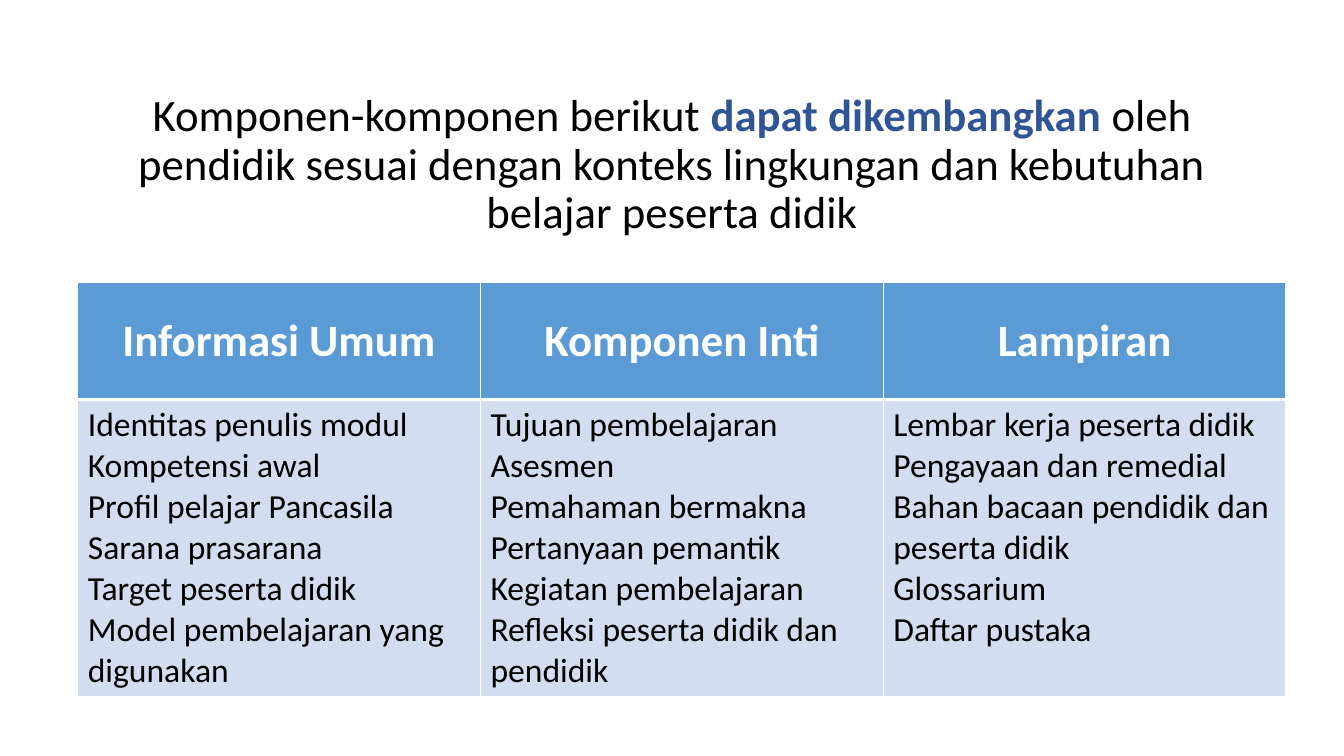
import pptx
import pptx.dml.color
import pptx.enum.text
import pptx.oxml
import pptx.oxml.ns
import pptx.util
from pptx.util import Cm

FONT = "Calibri"
BLACK, WHITE = "000000", "FFFFFF"
ACCENT, HEADER_FILL, BODY_FILL = "2F5597", "5B9BD5", "D2DEEF"

HEADING = [
    ("Komponen-komponen berikut ", BLACK, False),
    ("dapat dikembangkan", ACCENT, True),
    (" oleh pendidik sesuai dengan konteks lingkungan dan kebutuhan "
     "belajar peserta didik", BLACK, False),
]
COMPONENTS = {
    "Informasi Umum": [
        "Identitas penulis modul",
        "Kompetensi awal",
        "Profil pelajar Pancasila",
        "Sarana prasarana",
        "Target peserta didik",
        "Model pembelajaran yang digunakan",
    ],
    "Komponen Inti": [
        "Tujuan pembelajaran",
        "Asesmen",
        "Pemahaman bermakna",
        "Pertanyaan pemantik",
        "Kegiatan pembelajaran",
        "Refleksi peserta didik dan pendidik",
    ],
    "Lampiran": [
        "Lembar kerja peserta didik",
        "Pengayaan dan remedial",
        "Bahan bacaan pendidik dan peserta didik",
        "Glossarium",
        "Daftar pustaka",
    ],
}


def color(value):
    return pptx.dml.color.RGBColor.from_string(value)


def format_span(span, size, value, bold):
    span.font.name = FONT
    span.font.size = pptx.util.Pt(size)
    span.font.color.rgb = color(value)
    span.font.bold = bold


def set_borders(cell, widths):
    properties = cell._tc.get_or_add_tcPr()
    for position, (side, width) in enumerate(widths.items()):
        line = pptx.oxml.parse_xml(
            f'<a:ln{side} {pptx.oxml.ns.nsdecls("a")} w="{pptx.util.Pt(width)}">'
            f'<a:solidFill><a:srgbClr val="{WHITE}"/></a:solidFill></a:ln{side}>'
        )
        properties.insert(position, line)


def fill_cell(cell, text, fill, size, value, bold, alignment, borders):
    cell.text_frame.text = text
    cell.fill.solid()
    cell.fill.fore_color.rgb = color(fill)
    for para in cell.text_frame.paragraphs:
        para.alignment = alignment
        for span in para.runs:
            format_span(span, size, value, bold)
    set_borders(cell, borders)


def add_heading(page, left, top, width, height):
    box = page.shapes.title
    box.left, box.top, box.width, box.height = left, top, width, height
    frame = box.text_frame
    frame.word_wrap = True
    frame.auto_size = pptx.enum.text.MSO_AUTO_SIZE.NONE
    frame.vertical_anchor = pptx.enum.text.MSO_ANCHOR.MIDDLE
    para = frame.paragraphs[0]
    para.alignment = pptx.enum.text.PP_ALIGN.CENTER
    para.line_spacing = 0.9
    for text, value, bold in HEADING:
        span = para.add_run()
        span.text = text
        format_span(span, 32, value, bold)


def add_components(page, left, top, width, height):
    table = page.shapes.add_table(
        2, len(COMPONENTS), left, top, width, height
    ).table
    header_height = Cm(2.95)
    table.rows[0].height = header_height
    table.rows[1].height = height - header_height
    align = pptx.enum.text.PP_ALIGN
    for index, (heading, items) in enumerate(COMPONENTS.items()):
        header, body = table.cell(0, index), table.cell(1, index)
        fill_cell(header, heading, HEADER_FILL, 32, WHITE, True, align.CENTER,
                  {"L": 1, "R": 1, "T": 1, "B": 3})
        header.vertical_anchor = pptx.enum.text.MSO_ANCHOR.MIDDLE
        fill_cell(body, "\n".join(items), BODY_FILL, 24, BLACK, False, align.LEFT,
                  {"L": 1, "R": 1, "T": 3, "B": 1})


def main():
    deck = pptx.Presentation()
    deck.slide_width, deck.slide_height = Cm(33.87), Cm(19.05)
    page = deck.slides.add_slide(deck.slide_layouts.get_by_name("Title Only"))
    add_heading(page, Cm(2.33), Cm(2.33), Cm(29.21), Cm(3.68))
    add_components(page, Cm(1.96), Cm(7.12), Cm(30.45), Cm(10.4))
    deck.save("out.pptx")


if __name__ == "__main__":
    main()
